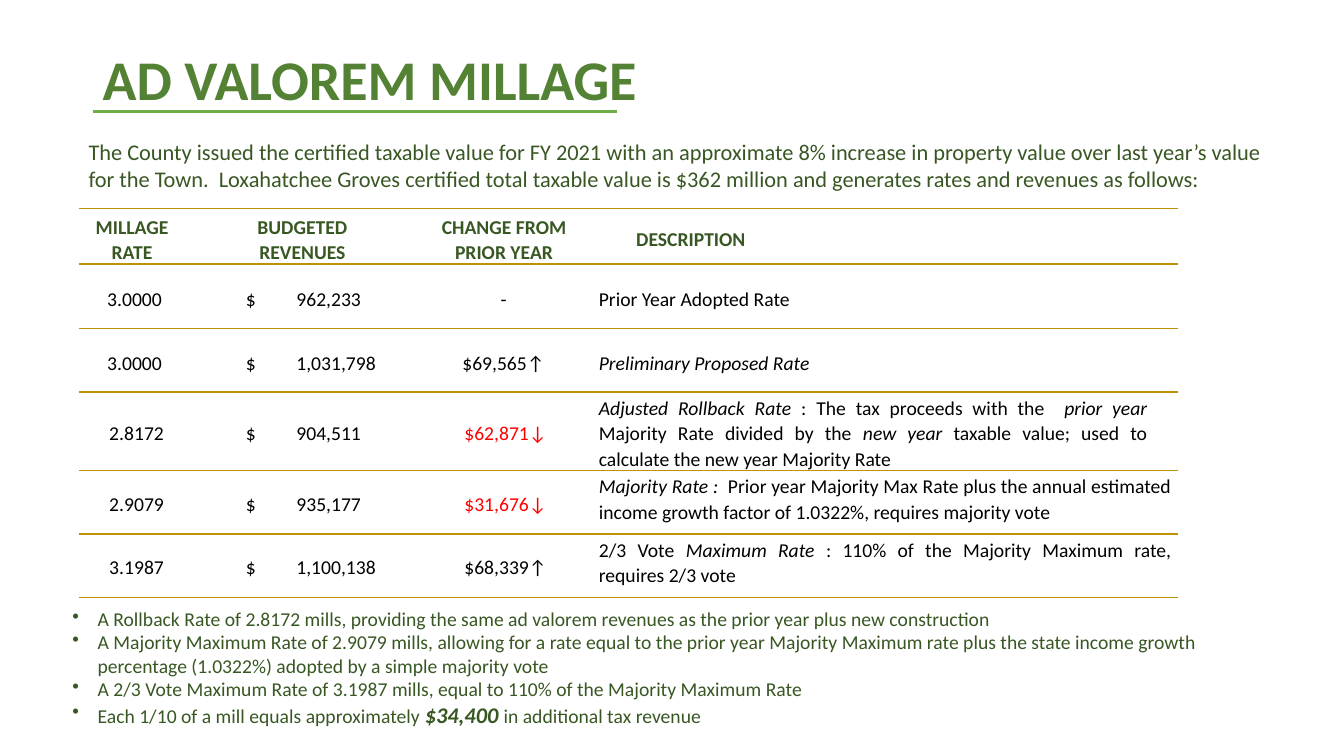
from lxml import etree
from pptx import Presentation
from pptx.dml.color import RGBColor
from pptx.enum.shapes import MSO_CONNECTOR
from pptx.enum.text import MSO_ANCHOR, PP_ALIGN
from pptx.oxml.ns import qn
from pptx.util import Inches, Pt

CENTER, LEFT, JUSTIFY = PP_ALIGN.CENTER, PP_ALIGN.LEFT, PP_ALIGN.JUSTIFY
TOP, MIDDLE = MSO_ANCHOR.TOP, MSO_ANCHOR.MIDDLE
STRAIGHT = MSO_CONNECTOR.STRAIGHT

FONT = "Calibri"
TITLE_GREEN, DARK_GREEN, RULE_GREEN = "548235", "385723", "70AD47"
GOLD, RED, BLACK, WHITE = "C09101", "FF0000", "000000", "FFFFFF"
NO_TABLE_STYLE = "{2D5ABB26-0587-4C30-8999-92F81FD0307C}"

INTRO = (
    "The County issued the certified taxable value for FY 2021 with an approximate 8% "
    "increase in property value over last year’s value for the Town.  Loxahatchee Groves "
    "certified total taxable value is $362 million and generates rates and revenues as follows:"
)
COLUMN_WIDTHS = (1.16, 2.16, 1.84, 5.74)
ROW_HEIGHTS = (0.5, 0.64, 0.63, 0.63, 0.63, 0.63)
REVENUE_TABS = ((0.55, "l"), (1.57, "r"))
HEADINGS = ("MILLAGE RATE", "BUDGETED\nREVENUES", "CHANGE FROM PRIOR YEAR", "DESCRIPTION")
# Asterisks enclose emphasised words.
RATES = (
    ("3.0000", "962,233", "-", "Prior Year Adopted Rate"),
    ("3.0000", "1,031,798", "$69,565↑", "*Preliminary Proposed Rate*"),
    ("2.8172", "904,511", "$62,871↓",
     "*Adjusted Rollback Rate *: The tax proceeds with the  *prior year *Majority Rate divided "
     "by the *new year* taxable value; used to calculate the new year Majority Rate"),
    ("2.9079", "935,177", "$31,676↓",
     "*Majority Rate :*  Prior year Majority Max Rate plus the annual estimated income growth "
     "factor of 1.0322%, requires majority vote"),
    ("3.1987", "1,100,138", "$68,339↑",
     "2/3 Vote *Maximum Rate *: 110% of the Majority Maximum rate, requires 2/3 vote"),
)
NOTES = (
    "A Rollback Rate of 2.8172 mills, providing the same ad valorem revenues as the prior "
    "year plus new construction",
    "A Majority Maximum Rate of 2.9079 mills, allowing for a rate equal to the prior year "
    "Majority Maximum rate plus the state income growth percentage (1.0322%) adopted by a "
    "simple majority vote",
    "A 2/3 Vote Maximum Rate of 3.1987 mills, equal to 110% of the Majority Maximum Rate",
    "Each 1/10 of a mill equals approximately *$34,400 *in additional tax revenue",
)


def rgb(color):
    return RGBColor.from_string(color)


def style_font(para, size, color, bold=False):
    font = para.font
    font.name, font.size, font.bold = FONT, Pt(size), bold
    font.color.rgb = rgb(color)


def add_spans(para, text):
    """Add text to a paragraph, italic between asterisks; return the italic runs."""
    emphasised = []
    for index, piece in enumerate(text.split("*")):
        if piece:
            span = para.add_run()
            span.text = piece
            if index % 2:
                span.font.italic = True
                emphasised.append(span)
    return emphasised


def set_indent(para, left, first=0, right=0):
    props = para._p.get_or_add_pPr()
    for name, value in (("marL", left), ("indent", first), ("marR", right)):
        props.set(name, str(Inches(value)))


def add_bullet(para):
    etree.SubElement(para._p.get_or_add_pPr(), qn("a:buChar"), char="•")


def add_tabs(para, stops):
    tabs = etree.SubElement(para._p.get_or_add_pPr(), qn("a:tabLst"))
    for position, align in stops:
        etree.SubElement(tabs, qn("a:tab"), pos=str(Inches(position)), algn=align)


def add_text_frame(page, left, top, width, height):
    box = page.shapes.add_textbox(Inches(left), Inches(top), Inches(width), Inches(height))
    box.text_frame.word_wrap = True
    return box.text_frame


def add_title(page):
    frame = add_text_frame(page, 0.92, 0.4, 11.5, 0.84)
    frame.vertical_anchor = MIDDLE
    para = frame.paragraphs[0]
    para.line_spacing = 0.9
    add_spans(para, "AD VALOREM MILLAGE")
    style_font(para, 40, TITLE_GREEN, bold=True)
    rule = page.shapes.add_connector(
        STRAIGHT, Inches(0.92), Inches(1.11), Inches(6.12), Inches(1.11))
    rule.line.color.rgb = rgb(RULE_GREEN)
    rule.line.width = Pt(2)
    etree.SubElement(rule._element.spPr, qn("a:effectLst"))


def add_intro(page):
    para = add_text_frame(page, 0.78, 1.32, 12.06, 0.7).paragraphs[0]
    add_spans(para, INTRO)
    style_font(para, 16, DARK_GREEN)


def add_notes_list(page):
    frame = add_text_frame(page, 0.62, 5.97, 12.23, 1.4)
    for index, note in enumerate(NOTES):
        para = frame.add_paragraph() if index else frame.paragraphs[0]
        set_indent(para, 0.25, -0.25)
        add_bullet(para)
        for span in add_spans(para, note):
            span.font.bold, span.font.size = True, Pt(16)
        style_font(para, 14, DARK_GREEN)


def format_cell(cell, top_inset, right_inset, anchor=MIDDLE):
    """Set insets, white fill and gold lines above and below."""
    cell.margin_left, cell.margin_right = 0, Inches(right_inset)
    cell.margin_top, cell.margin_bottom = Inches(top_inset), 0
    cell.vertical_anchor = anchor
    props = cell._tc.get_or_add_tcPr()
    for side in ("a:lnT", "a:lnB"):
        line = etree.SubElement(props, qn(side), w=str(Pt(1)))
        fill = etree.SubElement(line, qn("a:solidFill"))
        etree.SubElement(fill, qn("a:srgbClr"), val=GOLD)
    cell.fill.solid()
    cell.fill.fore_color.rgb = rgb(WHITE)


def fill_cell(cell, text, align, indent=0, right=0, tabs=(), color=BLACK, bold=False):
    for index, line in enumerate(text.split("\n")):
        frame = cell.text_frame
        para = frame.add_paragraph() if index else frame.paragraphs[0]
        para.alignment, para.line_spacing = align, 1.07
        set_indent(para, indent, right=right)
        if tabs:
            add_tabs(para, tabs)
        add_spans(para, line)
        style_font(para, 14, color, bold)


def add_rate_table(page):
    table = page.shapes.add_table(
        len(ROW_HEIGHTS), len(COLUMN_WIDTHS), Inches(0.78), Inches(2.07),
        Inches(sum(COLUMN_WIDTHS)), Inches(sum(ROW_HEIGHTS))).table
    table.first_row = table.horz_banding = False
    table._tbl.tblPr.find(qn("a:tableStyleId")).text = NO_TABLE_STYLE
    for column, width in zip(table.columns, COLUMN_WIDTHS):
        column.width = Inches(width)
    for row, height in zip(table.rows, ROW_HEIGHTS):
        row.height = Inches(height)

    for column, heading in enumerate(HEADINGS):
        cell = table.cell(0, column)
        format_cell(cell, 0.05, 0.1)
        last = column == len(HEADINGS) - 1
        fill_cell(cell, heading, LEFT if last else CENTER,
                  indent=0.37 if last else 0.06 if column else 0,
                  color=DARK_GREEN, bold=True)

    for row, (rate, revenue, change, description) in enumerate(RATES, start=1):
        cells = table.rows[row].cells
        detailed = row > 2
        insets = (0.03, 0.06) if detailed else (0.05, 0.1)
        for cell in list(cells)[:3]:
            format_cell(cell, *insets)
        format_cell(cells[3], *insets, anchor=TOP if detailed else MIDDLE)
        fill_cell(cells[0], rate, CENTER, indent=0.05)
        fill_cell(cells[1], f"\t$\t{revenue}", LEFT, tabs=REVENUE_TABS)
        fill_cell(cells[2], change, CENTER, indent=0.05,
                  color=RED if "↓" in change else BLACK)
        fill_cell(cells[3], description, JUSTIFY if detailed else LEFT,
                  right=0.24 if row == 3 else 0)


def main():
    deck = Presentation()
    deck.slide_width, deck.slide_height = Inches(13.33), Inches(7.5)
    page = deck.slides.add_slide(deck.slide_layouts[6])
    add_title(page)
    add_rate_table(page)
    add_notes_list(page)
    add_intro(page)
    deck.save("out.pptx")


if __name__ == "__main__":
    main()
